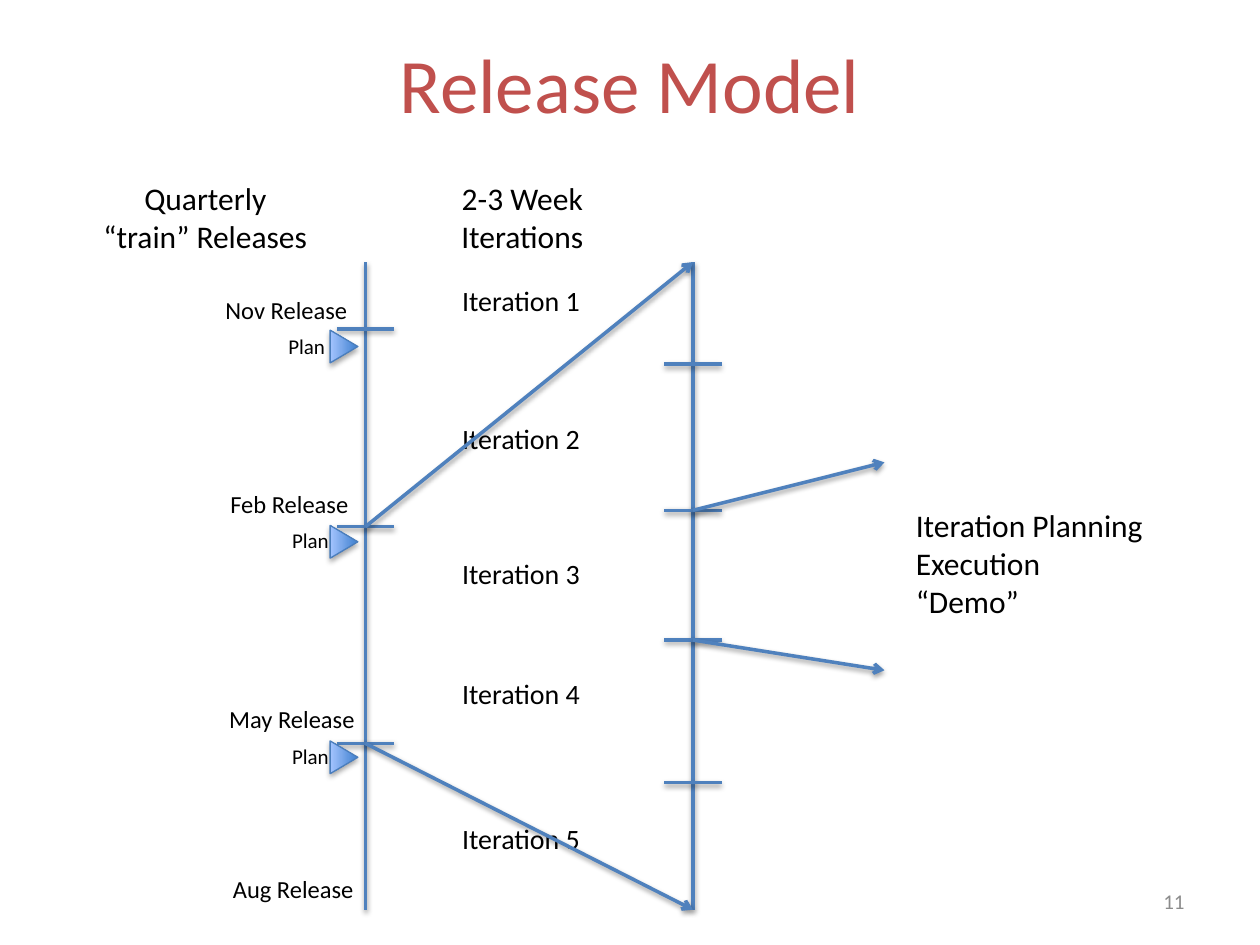
from lxml.etree import SubElement
from pptx import Presentation
from pptx.dml.color import RGBColor
from pptx.enum.shapes import MSO_CONNECTOR as CONN, MSO_SHAPE as SHAPE
from pptx.enum.text import MSO_ANCHOR as ANCHOR, MSO_AUTO_SIZE as FIT, PP_ALIGN as ALIGN
from pptx.oxml.ns import qn
from pptx.util import Inches, Pt

COLORS = {
    "title": "C0504D", "text": "000000", "number": "8C8C8C", "line": "4F81BD",
    "edge": "4B7EBC", "dark": "3F80CE", "light": "A4C4FF", "shadow": "000000",
}
FONT = "Calibri"
COLS, ROWS = 100, 75
CELL = Inches(10) // COLS
RELEASE_X, ITERATION_X, DETAIL_X = 29, 55, 70.2
TOP, BOTTOM = 20.8, 72.2
TICK = 2.27
RELEASE_TICKS = (26.1, 41.8, 59)
ITERATION_TICKS = (28.9, 40.5, 50.8, 62.1)
ITERATION_LABELS = (22, 33, 43.7, 53.2, 64.7)
RELEASES = (
    ("Nov Release", 16.9, 22.9, 11.8),
    ("Feb Release", 17.3, 38.3, 11.6),
    ("May Release", 17.2, 55.4, 12.1),
    ("Aug Release", 17.5, 68.9, 11.7),
)
PLANS = ((21.9, 26, 26.4), (22.2, 41.4, 41.9), (22.2, 58.5, 59))


def grid(*cells):
    return [round(c * CELL) for c in cells]


def rgb(name):
    return RGBColor.from_string(COLORS[name])


def add_shadow(shape, alpha, dist):
    effects = SubElement(shape._element.spPr, qn("a:effectLst"))
    shadow = SubElement(effects, qn("a:outerShdw"), blurRad=str(Pt(3.1)),
                        dist=str(Pt(dist)), dir="5400000", rotWithShape="0")
    color = SubElement(shadow, qn("a:srgbClr"), val=COLORS["shadow"])
    SubElement(color, qn("a:alpha"), val=str(alpha * 1000))


def add_line(s, x1, y1, x2, y2, arrow=False):
    line = s.shapes.add_connector(CONN.STRAIGHT, *grid(x1, y1, x2, y2))
    line.line.color.rgb = rgb("line")
    line.line.width = Pt(2)
    if arrow:
        SubElement(line.line._get_or_add_ln(), qn("a:tailEnd"), type="arrow")
    add_shadow(line, 38, 1.6)


def add_timeline(s, x, ticks):
    add_line(s, x, TOP, x, BOTTOM)
    for y in ticks:
        add_line(s, x - TICK, y, x + TICK, y)


def add_text(s, lines, x, y, w, h, size, color="text", align=ALIGN.LEFT, block=False):
    tf = s.shapes.add_textbox(*grid(x, y, w, h)).text_frame
    tf.word_wrap = block
    tf.auto_size = FIT.NONE if block else FIT.SHAPE_TO_FIT_TEXT
    tf.vertical_anchor = ANCHOR.MIDDLE if block else ANCHOR.TOP
    tf.text = "\n".join(lines)
    for p in tf.paragraphs:
        p.alignment = align
        p.font.name = FONT
        p.font.size = Pt(size)
        p.font.color.rgb = rgb(color)


def add_marker(s, y):
    sp = s.shapes.add_shape(SHAPE.FLOWCHART_MERGE, *grid(26, y, 2.6, 2.2))
    sp.rotation = 270
    sp.fill.gradient()
    sp.fill.gradient_angle = 90
    for stop, name in zip(sp.fill.gradient_stops, ("dark", "light")):
        stop.color.rgb = rgb(name)
    sp.line.color.rgb = rgb("edge")
    sp.line.width = Pt(0.75)
    add_shadow(sp, 35, 1.8)


def main():
    prs = Presentation()
    prs.slide_width, prs.slide_height = grid(COLS, ROWS)
    s = prs.slides.add_slide(prs.slide_layouts[6])

    add_text(s, ["Release Model"], 5, 0.3, 90, 12.5, 44, "title", ALIGN.CENTER, True)
    add_text(s, ["11"], 71.7, 69.5, 23.3, 4, 12, "number", ALIGN.RIGHT, True)

    add_timeline(s, RELEASE_X, RELEASE_TICKS)
    add_timeline(s, ITERATION_X, ITERATION_TICKS)

    for n, y in enumerate(ITERATION_LABELS, 1):
        add_text(s, [f"Iteration {n}"], 35.7, y, 11.6, 3.7, 16)
    add_text(s, ["Quarterly", "“train” Releases"], 7.1, 13.7, 18.4, 7.1, 18,
             align=ALIGN.CENTER)
    add_text(s, ["2-3 Week", "Iterations"], 35.5, 13.7, 11.9, 7.1, 18,
             align=ALIGN.CENTER)
    add_text(s, ["Iteration Planning", "Execution", "“Demo”"],
             71.7, 39.7, 20.3, 10.1, 18)

    for start, end in zip(RELEASE_TICKS[1:], (TOP, BOTTOM)):
        add_line(s, RELEASE_X, start, ITERATION_X, end, arrow=True)
    for start, end in zip(ITERATION_TICKS[1:3], (36.7, 53.2)):
        add_line(s, ITERATION_X, start, DETAIL_X, end, arrow=True)

    for x, y, marker_y in PLANS:
        add_marker(s, marker_y)
        add_text(s, ["Plan"], x, y, 5, 3, 12)
    for name, x, y, w in RELEASES:
        add_text(s, [name], x, y, w, 3.4, 14)

    prs.save("out.pptx")


if __name__ == "__main__":
    main()
